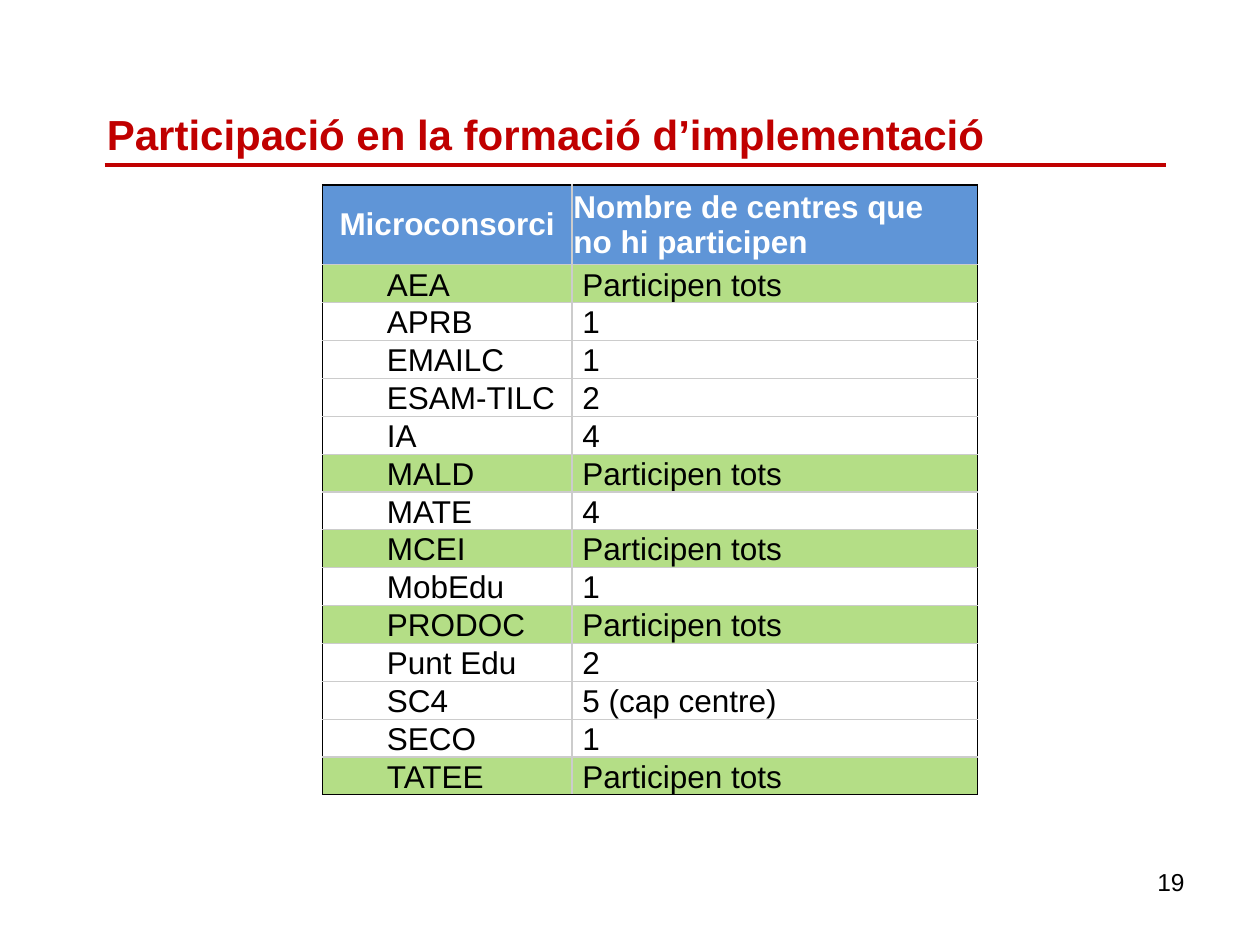
from dataclasses import dataclass

from lxml import etree
from pptx import Presentation
from pptx.dml.color import RGBColor
from pptx.enum.shapes import MSO_CONNECTOR
from pptx.enum.text import MSO_ANCHOR, MSO_AUTO_SIZE, PP_ALIGN
from pptx.oxml.ns import qn
from pptx.slide import Slide
from pptx.table import Table, _Cell
from pptx.text.text import _Paragraph
from pptx.util import Cm, Pt

LEFT, CENTER, RIGHT = PP_ALIGN.LEFT, PP_ALIGN.CENTER, PP_ALIGN.RIGHT
MIDDLE, BOTTOM = MSO_ANCHOR.MIDDLE, MSO_ANCHOR.BOTTOM
TITLE_ONLY = 5


@dataclass(frozen=True)
class Theme:
    font: str = "Arial"
    red: str = "C00000"
    blue: str = "5F95D7"
    green: str = "B4DE86"
    grey: str = "CCCCCC"
    black: str = "000000"
    white: str = "FFFFFF"
    title_size: int = 24
    table_size: int = 18
    number_size: int = 14
    border: float = 0.75
    rule: float = 2.25


@dataclass(frozen=True)
class Consortium:
    name: str
    absent: str = "Participen tots"

    @property
    def complete(self) -> bool:
        return self.absent == "Participen tots"


THEME = Theme()
CONSORTIA = [
    Consortium("AEA"),
    Consortium("APRB", "1"),
    Consortium("EMAILC", "1"),
    Consortium("ESAM-TILC", "2"),
    Consortium("IA", "4"),
    Consortium("MALD"),
    Consortium("MATE", "4"),
    Consortium("MCEI"),
    Consortium("MobEdu", "1"),
    Consortium("PRODOC"),
    Consortium("Punt Edu", "2"),
    Consortium("SC4", "5 (cap centre)"),
    Consortium("SECO", "1"),
    Consortium("TATEE"),
]
HEADERS = [
    (["Microconsorci"], CENTER),
    (["Nombre de centres que", "no hi participen"], LEFT),
]
COLUMN_WIDTHS = [Cm(5.03), Cm(8.18)]
COLUMN_INDENTS = [Cm(1.27), Cm(0.18)]
HEADER_HEIGHT, ROW_HEIGHT = Cm(1.61), Cm(0.76)


def add_span(para: _Paragraph, text: str, size: int, color: str, bold: bool = False) -> None:
    span = para.add_run()
    span.text = text
    span.font.name = THEME.font
    span.font.size = Pt(size)
    span.font.bold = bold
    span.font.color.rgb = RGBColor.from_string(color)


def set_borders(cell: _Cell, colors: dict[str, str]) -> None:
    """Draw the cell edges; keys are L, R, T and B, in that order."""
    properties = cell._tc.get_or_add_tcPr()
    for side, color in colors.items():
        line = etree.SubElement(properties, qn(f"a:ln{side}"), w=str(Pt(THEME.border)))
        fill = etree.SubElement(line, qn("a:solidFill"))
        etree.SubElement(fill, qn("a:srgbClr"), val=color)


def format_cell(table: Table, row: int, column: int, fill: str | None) -> _Cell:
    """Set insets, fill and borders: black around the table, grey inside it."""
    cell = table.cell(row, column)
    cell.margin_left = cell.margin_right = Cm(0.03)
    cell.margin_top = cell.margin_bottom = 0
    cell.vertical_anchor = BOTTOM if row else MIDDLE
    outer = {
        "L": column == 0,
        "R": column == len(table.columns) - 1,
        "T": row == 0,
        "B": row == len(table.rows) - 1,
    }
    set_borders(cell, {side: THEME.black if edge else THEME.grey for side, edge in outer.items()})
    if fill:
        cell.fill.solid()
        cell.fill.fore_color.rgb = RGBColor.from_string(fill)
    else:
        cell.fill.background()
    return cell


def add_title(page: Slide, text: str) -> None:
    title = page.shapes.title
    title.left, title.top, title.width, title.height = Cm(1.9), Cm(0.53), Cm(21.6), Cm(2.8)
    frame = title.text_frame
    frame.auto_size = MSO_AUTO_SIZE.NONE
    frame.vertical_anchor = BOTTOM
    para = frame.paragraphs[0]
    para.alignment = LEFT
    add_span(para, text, THEME.title_size, THEME.red, bold=True)


def add_title_rule(page: Slide) -> None:
    rule = page.shapes.add_connector(
        MSO_CONNECTOR.STRAIGHT, Cm(2.11), Cm(3.33), Cm(23.5), Cm(3.33))
    rule.line.color.rgb = RGBColor.from_string(THEME.red)
    rule.line.width = Pt(THEME.rule)
    etree.SubElement(rule._element.spPr, qn("a:effectLst"))


def add_page_number(page: Slide, number: str) -> None:
    box = page.shapes.add_textbox(Cm(18.2), Cm(17.35), Cm(5.93), Cm(1.32))
    box.text_frame.word_wrap = True
    para = box.text_frame.paragraphs[0]
    para.alignment = RIGHT
    add_span(para, number, THEME.number_size, THEME.black)


def add_participation_table(page: Slide) -> None:
    height = HEADER_HEIGHT + ROW_HEIGHT * len(CONSORTIA)
    table = page.shapes.add_table(
        len(CONSORTIA) + 1, len(HEADERS), Cm(6.5), Cm(3.73), sum(COLUMN_WIDTHS), height).table
    table.horz_banding = False
    for column, width in zip(table.columns, COLUMN_WIDTHS):
        column.width = width
    for index, row in enumerate(table.rows):
        row.height = ROW_HEIGHT if index else HEADER_HEIGHT

    for column, (lines, alignment) in enumerate(HEADERS):
        frame = format_cell(table, 0, column, THEME.blue).text_frame
        for index, line in enumerate(lines):
            para = frame.add_paragraph() if index else frame.paragraphs[0]
            para.alignment = alignment
            add_span(para, line, THEME.table_size, THEME.white, bold=True)

    for row, consortium in enumerate(CONSORTIA, start=1):
        fill = THEME.green if consortium.complete else None
        for column, text in enumerate((consortium.name, consortium.absent)):
            para = format_cell(table, row, column, fill).text_frame.paragraphs[0]
            para.alignment = LEFT
            para._p.get_or_add_pPr().set("marL", str(COLUMN_INDENTS[column]))
            add_span(para, text, THEME.table_size, THEME.black)


def main() -> None:
    deck = Presentation()
    deck.slide_width, deck.slide_height = Cm(25.4), Cm(19.05)
    page = deck.slides.add_slide(deck.slide_layouts[TITLE_ONLY])
    add_title_rule(page)
    add_page_number(page, "19")
    add_title(page, "Participació en la formació d’implementació")
    add_participation_table(page)
    deck.save("out.pptx")


if __name__ == "__main__":
    main()
